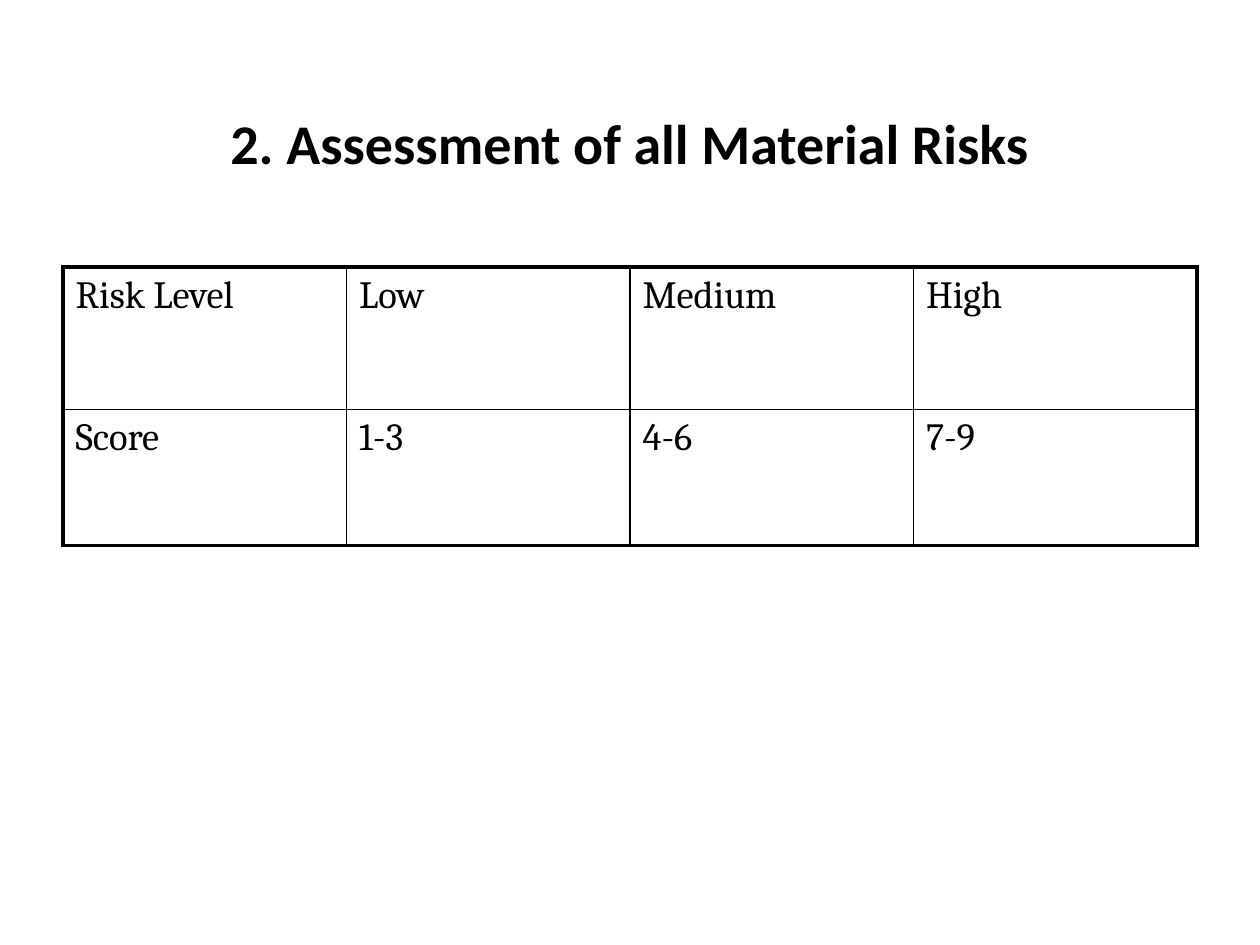
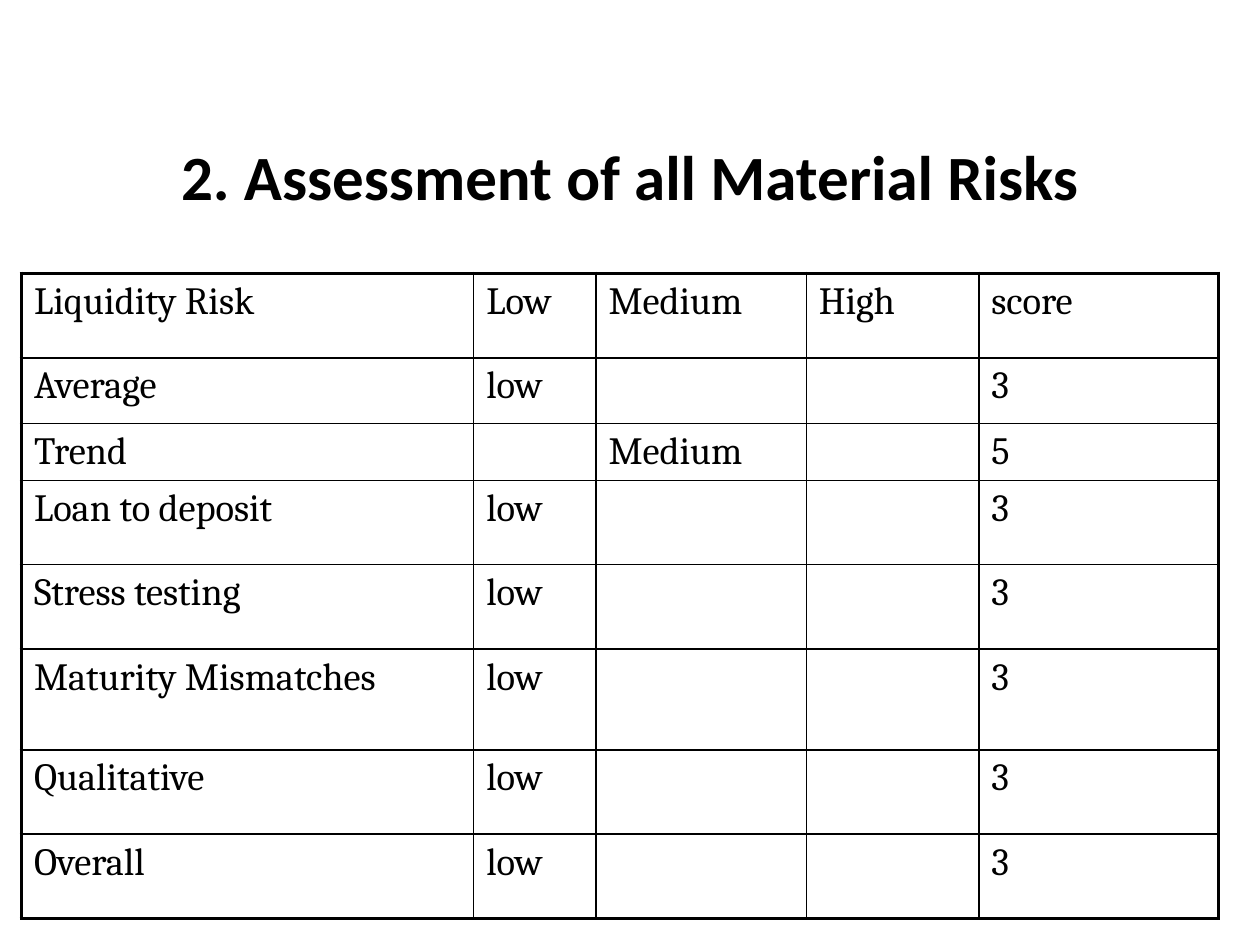
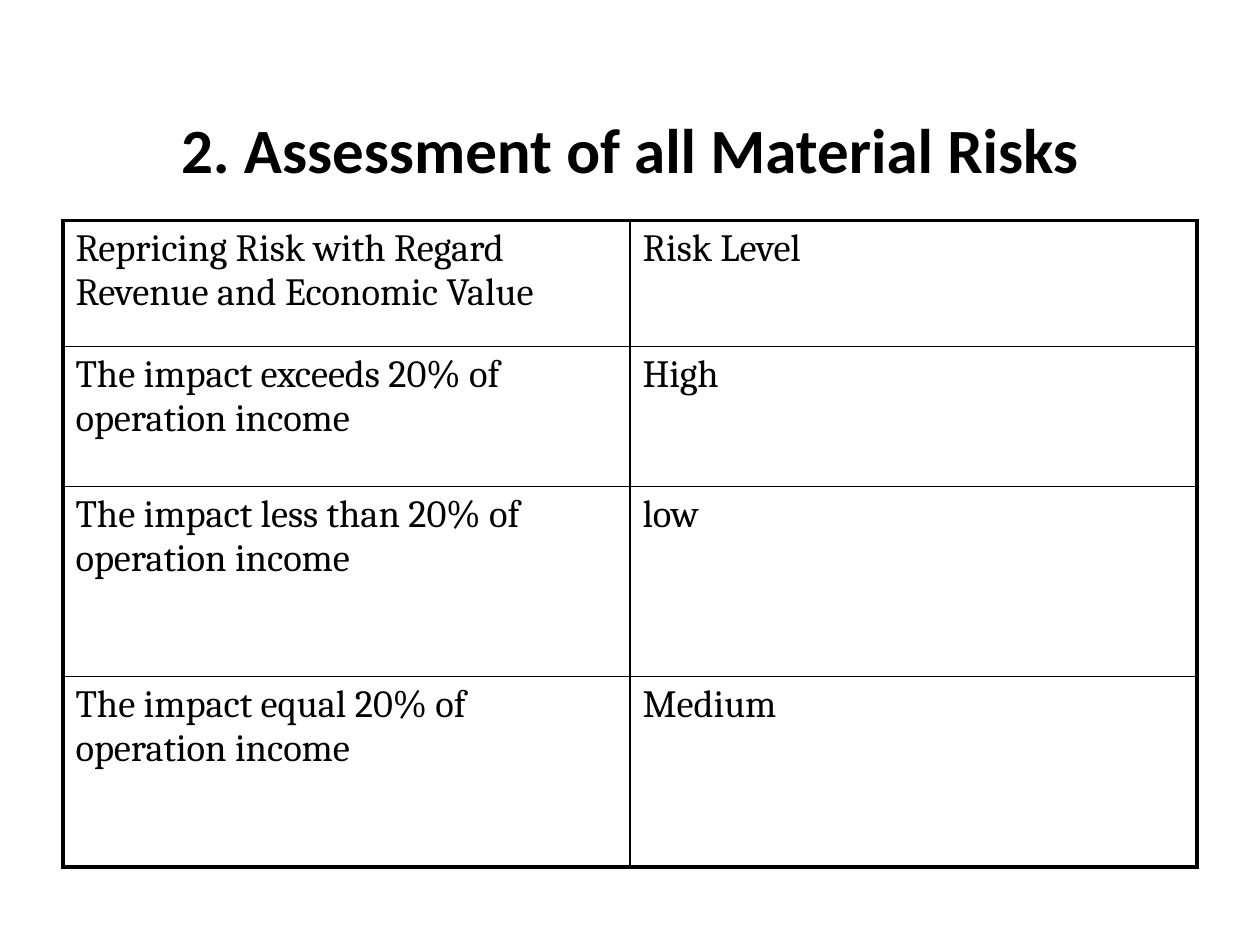
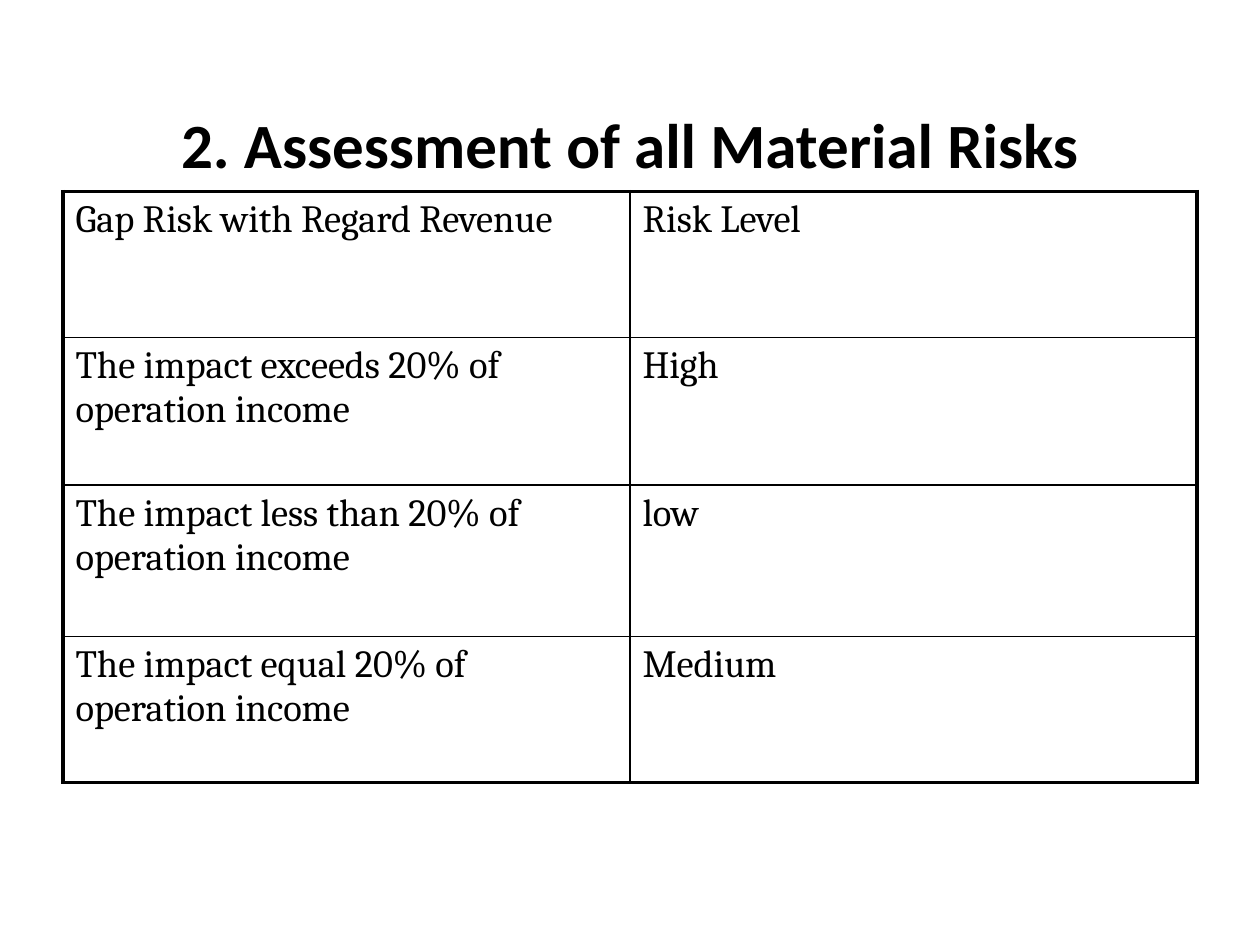
"""Build four slides of risk assessment tables."""
from dataclasses import dataclass

from lxml import etree
from pptx import Presentation
from pptx import util as u
from pptx.dml.color import RGBColor
from pptx.enum import text
from pptx.oxml import ns


@dataclass(frozen=True)
class Theme:
    ink: str = "000000"
    paper: str = "FFFFFF"
    title_font: str = "Calibri"
    table_font: str = "Cambria"
    table_size: float = 22
    space_before: str = "20000"
    inner_line: float = 1
    outer_line: float = 2.25


theme = Theme()
TITLE = "2. Assessment of all Material Risks"
IMPACTS = [
    ["The impact exceeds 20% of operation income", "High"],
    ["The impact less than 20% of operation income", "low"],
    ["The impact equal 20% of operation income", "Medium"],
]
SLIDES = [
    {
        "title_size": 32, "title_height": 1.25, "title_bottom": 0.58,
        "left": 0.5, "top": 2.12,
        "columns": [2.25] * 4, "heights": [1.13, 1.08],
        "cells": [["Risk Level", "Low", "Medium", "High"],
                  ["Score", "1-3", "4-6", "7-9"]],
    },
    {
        "title_size": 36, "title_height": 1.25, "title_bottom": 0.05,
        "left": 0.17, "top": 2.17,
        "columns": [3.59, 0.97, 1.67, 1.37, 1.9],
        "heights": [0.67, 0.52, 0.33, 0.67, 0.67, 0.8, 0.67, 0.67],
        "cells": [["Liquidity Risk", "Low", "Medium", "High", "score"],
                  ["Average", "low", "", "", "3"],
                  ["Trend", "", "Medium", "", "5"],
                  ["Loan to deposit", "low", "", "", "3"],
                  ["Stress testing", "low", "", "", "3"],
                  ["Maturity Mismatches", "low", "", "", "3"],
                  ["Qualitative", "low", "", "", "3"],
                  ["Overall", "low", "", "", "3"]],
    },
    {
        "title_size": 36, "title_height": 0.81, "title_bottom": 0.05,
        "left": 0.5, "top": 1.75,
        "columns": [4.5] * 2, "heights": [1, 1.11, 1.51, 1.51],
        "cells": [["Repricing Risk with Regard Revenue and Economic Value",
                   "Risk Level"], *IMPACTS],
    },
    {
        "title_size": 36, "title_height": 0.73, "title_bottom": 0.05,
        "left": 0.5, "top": 1.52,
        "columns": [4.5] * 2, "heights": [1.16, 1.17, 1.2, 1.16],
        "cells": [["Gap Risk with Regard Revenue", "Risk Level"], *IMPACTS],
    },
]


def format_text(paragraph, font, size, bold=False):
    for span in paragraph.runs:
        span.font.name = font
        span.font.size = u.Pt(size)
        span.font.bold = bold
        span.font.color.rgb = RGBColor.from_string(theme.ink)


def draw_border(cell, side, width):
    properties = cell._tc.get_or_add_tcPr()
    line = etree.SubElement(properties, ns.qn(f"a:ln{side}"), w=str(u.Pt(width)))
    fill = etree.SubElement(line, ns.qn("a:solidFill"))
    etree.SubElement(fill, ns.qn("a:srgbClr"), val=theme.ink)


deck = Presentation()
deck.slide_width, deck.slide_height = u.Inches(10), u.Inches(7.5)
background = deck.slide_master.background.fill
background.solid()
background.fore_color.rgb = RGBColor.from_string(theme.paper)

for content in SLIDES:
    page = deck.slides.add_slide(deck.slide_layouts[5])
    title = page.shapes.title
    title.left, title.top = u.Inches(0.5), u.Inches(0.77)
    title.width, title.height = u.Inches(9), u.Inches(content["title_height"])
    frame = title.text_frame
    frame.text = TITLE
    frame.auto_size = text.MSO_AUTO_SIZE.NONE
    frame.vertical_anchor = text.MSO_ANCHOR.MIDDLE
    frame.margin_bottom = u.Inches(content["title_bottom"])
    frame.paragraphs[0].alignment = text.PP_ALIGN.CENTER
    format_text(frame.paragraphs[0], theme.title_font, content["title_size"], True)

    columns, heights = content["columns"], content["heights"]
    table = page.shapes.add_table(
        len(heights), len(columns),
        u.Inches(content["left"]), u.Inches(content["top"]),
        u.Inches(sum(columns)), u.Inches(sum(heights))).table
    table.first_row = table.horz_banding = False
    for column, width in zip(table.columns, columns):
        column.width = u.Inches(width)
    for row, height in zip(table.rows, heights):
        row.height = u.Inches(height)

    last_row, last_column = len(heights) - 1, len(columns) - 1
    for r, labels in enumerate(content["cells"]):
        for c, label in enumerate(labels):
            cell = table.cell(r, c)
            edges = {"L": c == 0, "R": c == last_column,
                     "T": r == 0, "B": r == last_row}
            for side, is_outer in edges.items():
                draw_border(cell, side, theme.outer_line if is_outer else theme.inner_line)
            cell.fill.background()
            if label:
                cell.text_frame.text = label
                para = cell.text_frame.paragraphs[0]
                spacing = etree.SubElement(para._p.get_or_add_pPr(), ns.qn("a:spcBef"))
                etree.SubElement(spacing, ns.qn("a:spcPct"), val=theme.space_before)
                format_text(para, theme.table_font, theme.table_size)

deck.save("out.pptx")
